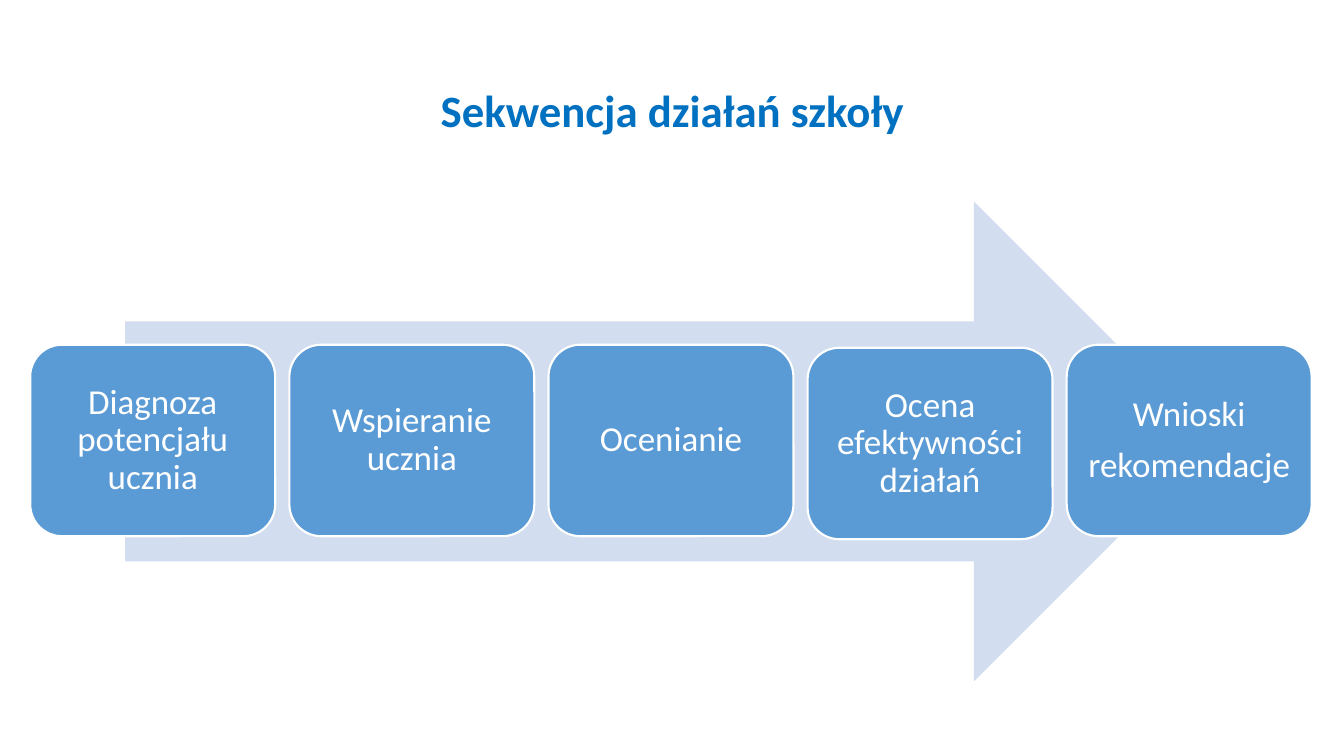
from pptx import Presentation
from pptx.dml.color import RGBColor as RGB
from pptx.enum.shapes import MSO_SHAPE as SHAPE
from pptx.enum.text import MSO_ANCHOR as ANCHOR, PP_ALIGN as ALIGN
from pptx.util import Inches, Pt

COLORS = {"title": "0070C0", "arrow": "D2DEEF", "step": "5B9BD5", "white": "FFFFFF"}
TITLE = {"name": "Calibri", "size": Pt(32), "bold": True}
BODY = {"name": "Calibri", "size": Pt(25), "bold": False}
PARA = {"alignment": ALIGN.CENTER, "line_spacing": 0.9}
FRAME = {"word_wrap": True, "vertical_anchor": ANCHOR.MIDDLE}
INSET = dict.fromkeys(
    ("margin_left", "margin_top", "margin_right", "margin_bottom"), Inches(0.1)
)
LEFT, TOP, PITCH = 0.3, 3.42, 2.57
WIDTH, HEIGHT = 2.43, 1.9
STEPS = [
    (["Diagnoza potencjału ucznia"], 0),
    (["Wspieranie ucznia"], 0),
    (["Ocenianie"], 0),
    (["Ocena efektywności działań"], 0.03),
    (["Wnioski", "rekomendacje"], 0),
]


def color(name):
    return RGB.from_string(COLORS[name])


def apply(target, values):
    for key, value in values.items():
        setattr(target, key, value)


def write(shape, lines, font, tint, after=0):
    frame = shape.text_frame
    apply(frame, FRAME)
    frame.text = "\n".join(lines)
    for para in frame.paragraphs:
        apply(para, PARA | {"space_after": Pt(after)})
        for run in para.runs:
            apply(run.font, font)
            run.font.color.rgb = color(tint)


def add_title(slide, text):
    title = slide.shapes.title
    box = {"left": 0.92, "top": 0.4, "width": 11.5, "height": 1.45}
    apply(title, {key: Inches(value) for key, value in box.items()})
    write(title, [text], TITLE, "title")


def add_block(slide, kind, box, fill):
    shape = slide.shapes.add_shape(kind, *map(Inches, box))
    shape.shadow.inherit = False
    shape.fill.solid()
    shape.fill.fore_color.rgb = color(fill)
    shape.line.fill.background()
    return shape


def add_step(slide, index, lines, drop):
    box = (LEFT + index * PITCH, TOP + drop, WIDTH, HEIGHT)
    step = add_block(slide, SHAPE.ROUNDED_RECTANGLE, box, "step")
    step.line.color.rgb = color("white")
    step.line.width = Pt(1.5)
    apply(step.text_frame, INSET)
    write(step, lines, BODY, "white", after=9)


def main():
    deck = Presentation()
    deck.slide_width, deck.slide_height = Inches(13.33), Inches(7.5)
    slide = deck.slides.add_slide(deck.slide_layouts.get_by_name("Title Only"))
    add_title(slide, "Sekwencja działań szkoły")
    add_block(slide, SHAPE.RIGHT_ARROW, (1.24, 2, 10.8, 4.76), "arrow")
    for index, (lines, drop) in enumerate(STEPS):
        add_step(slide, index, lines, drop)
    deck.save("out.pptx")


if __name__ == "__main__":
    main()
